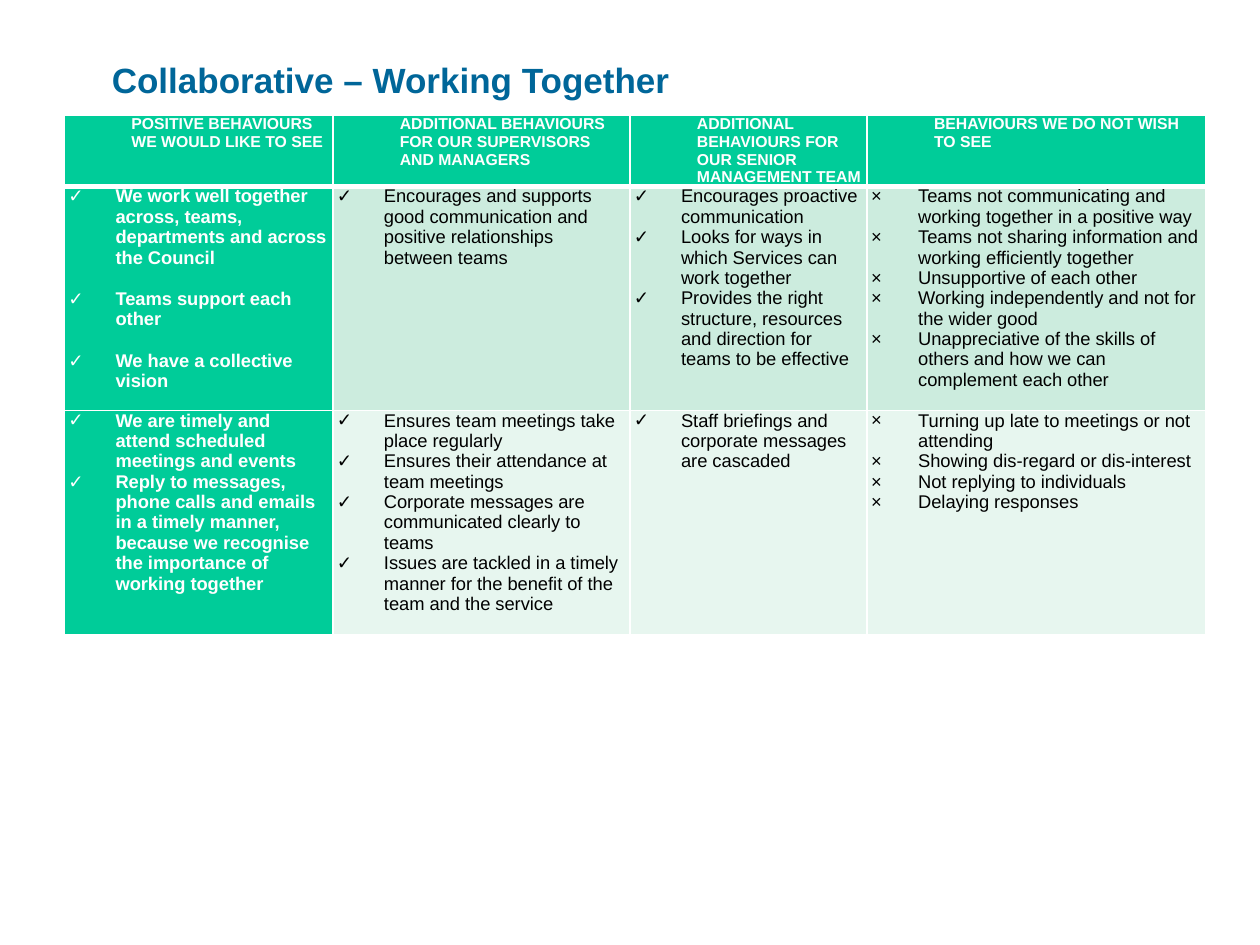
import pptx
import pptx.dml.color
import pptx.enum.text
import pptx.oxml.ns
import pptx.util
from lxml import etree

Cm = pptx.util.Cm
Pt = pptx.util.Pt

FONT = "Arial"
COLOURS = {
    "title": "006699",
    "strong": "00CC99",
    "first_row": "CCECDE",
    "second_row": "E7F6EF",
    "light": "FFFFFF",
    "dark": "000000",
}
CELL_MARGINS = {
    "margin_left": Cm(0.08),
    "margin_right": Cm(0.08),
    "margin_top": 0,
    "margin_bottom": 0,
}
COLUMN_WIDTHS = [5.41, 5.99, 4.78, 6.83]
ROW_HEIGHTS = [1.42, 4.52, 4.52]
TICK, CROSS = "✓", "×"
COLUMN_BULLETS = [TICK, TICK, TICK, CROSS]

HEADINGS = [
    "POSITIVE BEHAVIOURS WE WOULD LIKE TO SEE",
    "ADDITIONAL BEHAVIOURS FOR OUR SUPERVISORS AND MANAGERS",
    "ADDITIONAL BEHAVIOURS FOR OUR SENIOR MANAGEMENT TEAM",
    "BEHAVIOURS WE DO NOT WISH TO SEE",
]
BEHAVIOURS = [
    [
        ["We work well together across, teams, departments and across the Council",
         "Teams support each other",
         "We have a collective vision"],
        ["Encourages and supports good communication and positive relationships "
         "between teams"],
        ["Encourages proactive communication",
         "Looks for ways in which Services can work together",
         "Provides the right structure, resources and direction for teams to be "
         "effective"],
        ["Teams not communicating and working together in a positive way",
         "Teams not sharing information and working efficiently together",
         "Unsupportive of each other",
         "Working independently and not for the wider good",
         "Unappreciative of the skills of others and how we can complement each "
         "other"],
    ],
    [
        ["We are timely and attend scheduled meetings and events",
         "Reply to messages, phone calls and emails in a timely manner, because we "
         "recognise the importance of working together"],
        ["Ensures team meetings take place regularly",
         "Ensures their attendance at team meetings",
         "Corporate messages are communicated clearly to teams",
         "Issues are tackled in a timely manner for the benefit of the team and "
         "the service"],
        ["Staff briefings and corporate messages are cascaded"],
        ["Turning up late to meetings or not attending",
         "Showing dis-regard or dis-interest",
         "Not replying to individuals",
         "Delaying responses"],
    ],
]


def rgb(name):
    return pptx.dml.color.RGBColor.from_string(COLOURS[name])


def add_child(parent, tag, **attributes):
    child = etree.SubElement(parent, pptx.oxml.ns.qn(tag))
    for key, value in attributes.items():
        child.set(key, str(value))
    return child


def write(paragraph, text, size, colour, bold):
    run = paragraph.add_run()
    run.text = text
    style = {"name": FONT, "size": Pt(size), "bold": bold}
    for key, value in style.items():
        setattr(run.font, key, value)
    run.font.color.rgb = rgb(colour)


def indent(paragraph, left, first_line=0, bullet=None):
    properties = paragraph._p.get_or_add_pPr()
    properties.set("marL", str(Cm(left)))
    properties.set("indent", str(Cm(first_line)))
    if bullet:
        add_child(properties, "a:buFont", typeface=FONT)
        add_child(properties, "a:buChar", char=bullet)


def format_cell(cell, row, fill):
    """Set margins, white borders and fill; the rule below the headings is thicker."""
    for key, value in CELL_MARGINS.items():
        setattr(cell, key, value)
    widths = {
        "a:lnL": 1,
        "a:lnR": 1,
        "a:lnT": 3 if row == 1 else 1,
        "a:lnB": 3 if row == 0 else 1,
    }
    properties = cell._tc.get_or_add_tcPr()
    for tag, width in widths.items():
        border = add_child(properties, tag, w=Pt(width))
        add_child(add_child(border, "a:solidFill"), "a:srgbClr", val=COLOURS["light"])
    cell.fill.solid()
    cell.fill.fore_color.rgb = rgb(fill)


def fill_heading(cell, heading):
    format_cell(cell, 0, "strong")
    paragraph = cell.text_frame.paragraphs[0]
    indent(paragraph, 1.27)
    write(paragraph, heading, 9, "light", True)


def fill_behaviours(cell, row, column, behaviours):
    is_positive = column == 0
    row_fill = "first_row" if row == 1 else "second_row"
    format_cell(cell, row, "strong" if is_positive else row_fill)
    frame = cell.text_frame
    for number, behaviour in enumerate(behaviours):
        paragraph = frame.add_paragraph() if number else frame.paragraphs[0]
        indent(paragraph, 0.95, -0.95, COLUMN_BULLETS[column])
        if number and is_positive and row == 1:
            paragraph.space_before = Pt(12)
        write(paragraph, behaviour, 10.5, "light" if is_positive else "dark", is_positive)


def add_title(slide, text):
    title = slide.shapes.title
    place = {"left": Cm(2), "top": Cm(0.91), "width": Cm(21.59), "height": Cm(1.4)}
    for key, value in place.items():
        setattr(title, key, value)
    title.text_frame.vertical_anchor = pptx.enum.text.MSO_ANCHOR.MIDDLE
    paragraph = title.text_frame.paragraphs[0]
    paragraph.alignment = pptx.enum.text.PP_ALIGN.LEFT
    write(paragraph, text, 20, "title", True)


def add_behaviour_table(slide):
    table = slide.shapes.add_table(
        len(ROW_HEIGHTS), len(COLUMN_WIDTHS), Cm(1.3), Cm(2.33),
        Cm(sum(COLUMN_WIDTHS)), Cm(sum(ROW_HEIGHTS))).table
    for column, width in zip(table.columns, COLUMN_WIDTHS):
        column.width = Cm(width)
    for row, height in zip(table.rows, ROW_HEIGHTS):
        row.height = Cm(height)
    for column, heading in enumerate(HEADINGS):
        fill_heading(table.cell(0, column), heading)
    for row, groups in enumerate(BEHAVIOURS, start=1):
        for column, behaviours in enumerate(groups):
            fill_behaviours(table.cell(row, column), row, column, behaviours)


def main():
    deck = pptx.Presentation()
    deck.slide_width, deck.slide_height = Cm(25.4), Cm(19.05)
    slide = deck.slides.add_slide(deck.slide_layouts[5])
    add_title(slide, "Collaborative – Working Together")
    add_behaviour_table(slide)
    deck.save("out.pptx")


if __name__ == "__main__":
    main()
